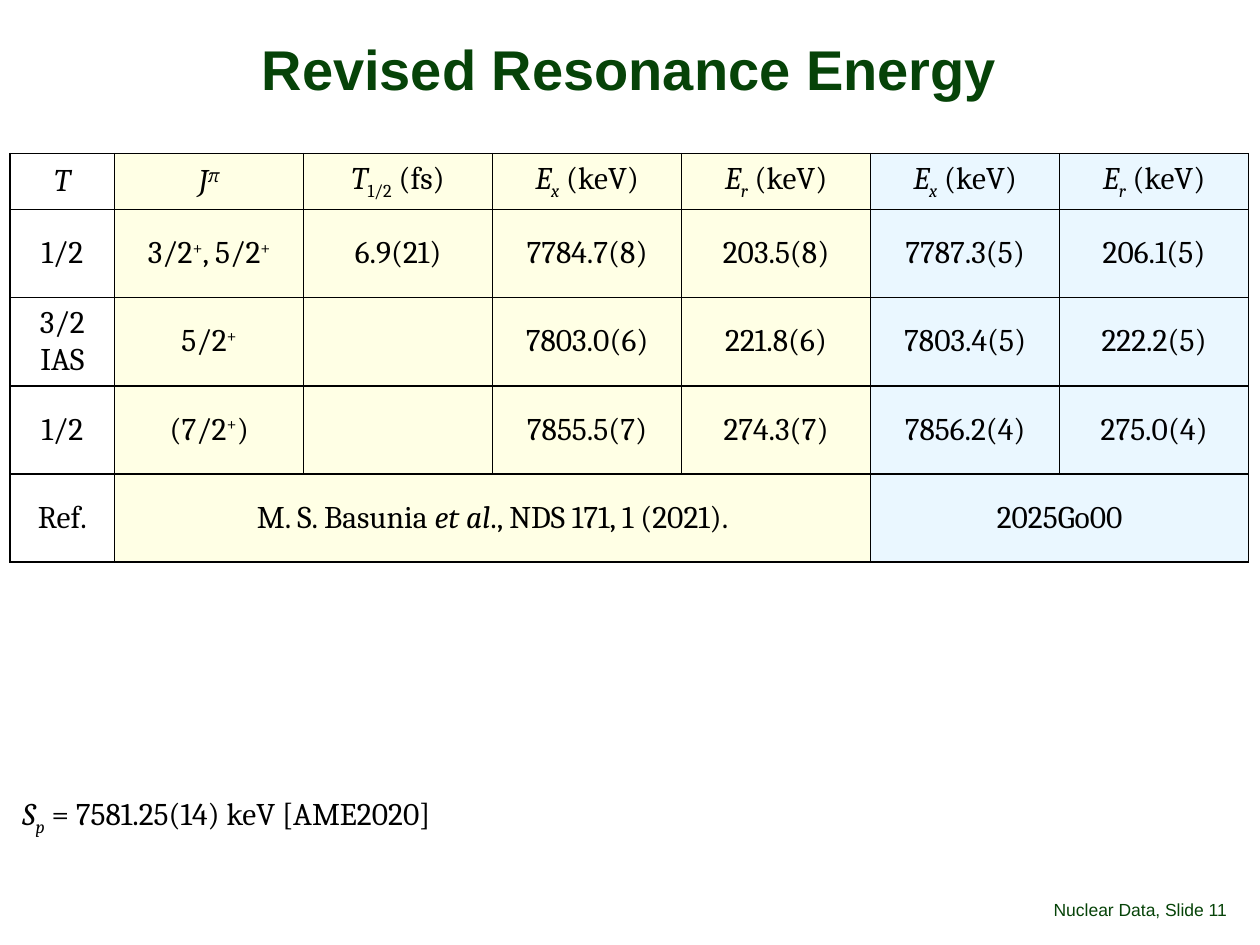
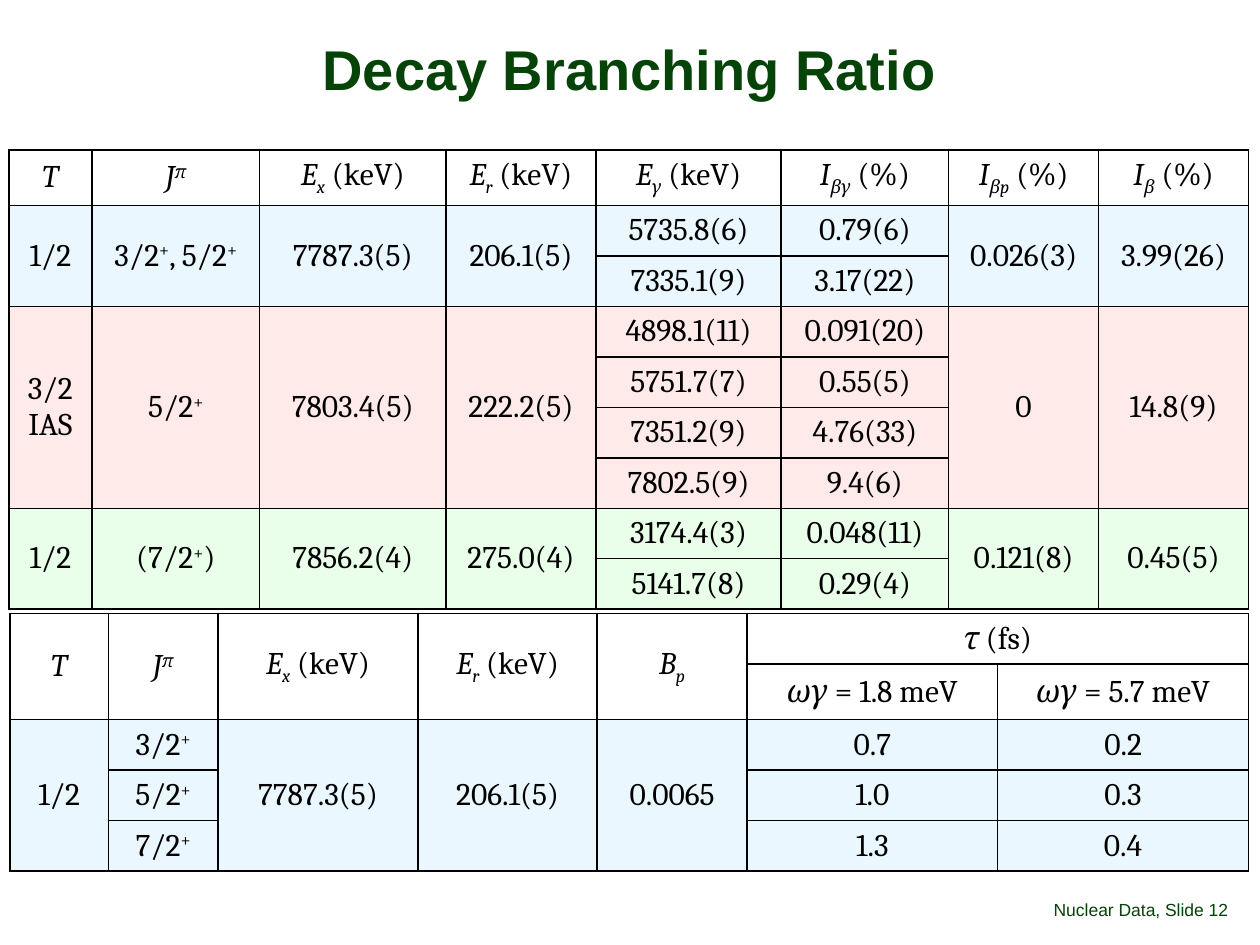
"""Build two slides of nuclear data tables: resonance energies and decay branching ratios."""

from dataclasses import dataclass
from itertools import groupby, takewhile

from lxml.etree import SubElement
from pptx import Presentation
from pptx.dml.color import RGBColor
from pptx.enum.text import MSO_ANCHOR, MSO_AUTO_SIZE, PP_ALIGN
from pptx.oxml.ns import qn
from pptx.util import Inches, Pt


@dataclass(frozen=True)
class Theme:
    """Colours, fonts and type sizes shared by the slides."""

    green: str = "064308"
    black: str = "000000"
    heading_font: str = "Arial"
    data_font: str = "Cambria"
    title_size: int = 32
    data_size: int = 18
    footer_size: int = 10
    border_width: int = 1


THEME = Theme()
YELLOW = ("FFFFCC", 50)
BLUE = ("CCECFF", 40)
PINK = ("FFCCCC", 40)
MINT = ("CCFFCC", 40)
LEFT, UP = "merge left", "merge up"

SPIN = "*J^π^*"
EXCITATION = "*E~x~* (keV)"
RESONANCE = "*E~r~* (keV)"
MIXED = "3/2^+^, 5/2^+^"
ISOBARIC = "3/2\nIAS"

RESONANCE_ROWS = [
    ["*T*", SPIN, "*T*~1/2~ (fs)", EXCITATION, RESONANCE, EXCITATION, RESONANCE],
    ["1/2", MIXED, "6.9(21)", "7784.7(8)", "203.5(8)", "7787.3(5)", "206.1(5)"],
    [ISOBARIC, "5/2^+^", "", "7803.0(6)", "221.8(6)", "7803.4(5)", "222.2(5)"],
    ["1/2", "(7/2^+^)", "", "7855.5(7)", "274.3(7)", "7856.2(4)", "275.0(4)"],
    ["Ref.", "M. S. Basunia *et al*., NDS 171, 1 (2021).", LEFT, LEFT, LEFT,
     "2025Go00", LEFT],
]

BRANCHING_HEADER = ["*T*", SPIN, EXCITATION, RESONANCE, "*E~γ~* (keV)",
                    "*I~βγ~* (%)", "*I~βp~* (%)", "*I~β~* (%)"]
BRANCHING_LEVELS = [
    (BLUE, ["1/2", MIXED, "7787.3(5)", "206.1(5)"],
     [("5735.8(6)", "0.79(6)"), ("7335.1(9)", "3.17(22)")],
     ["0.026(3)", "3.99(26)"]),
    (PINK, [ISOBARIC, "5/2^+^", "7803.4(5)", "222.2(5)"],
     [("4898.1(11)", "0.091(20)"), ("5751.7(7)", "0.55(5)"),
      ("7351.2(9)", "4.76(33)"), ("7802.5(9)", "9.4(6)")],
     ["0", "14.8(9)"]),
    (MINT, ["1/2", "(7/2^+^)", "7856.2(4)", "275.0(4)"],
     [("3174.4(3)", "0.048(11)"), ("5141.7(8)", "0.29(4)")],
     ["0.121(8)", "0.45(5)"]),
]

LIFETIME_ROWS = [
    ["*T*", SPIN, EXCITATION, RESONANCE, "*B~p~*", "*τ* (fs)", LEFT],
    [UP, UP, UP, UP, UP, "*ωγ* = 1.8 meV", "*ωγ* = 5.7 meV"],
    ["1/2", "3/2^+^", "7787.3(5)", "206.1(5)", "0.0065", "0.7", "0.2"],
    [UP, "5/2^+^", UP, UP, UP, "1.0", "0.3"],
    [UP, "7/2^+^", UP, UP, UP, "1.3", "0.4"],
]


def marked_characters(text):
    """Yield each character with its format: * is italic, ^ superscript, ~ subscript."""
    active = {"*": False, "^": False, "~": False}
    for character in text:
        if character in active:
            active[character] = not active[character]
        else:
            yield character, tuple(active.values())


def write(frame, text, size=THEME.data_size, font=THEME.data_font, color=THEME.black,
          bold=False, align=PP_ALIGN.LEFT, line_spacing=None):
    """Write marked text into a text frame, one paragraph per line."""
    for index, line in enumerate(text.split("\n")):
        paragraph = frame.add_paragraph() if index else frame.paragraphs[0]
        paragraph.alignment = align
        if line_spacing:
            paragraph.line_spacing = line_spacing
        for (italic, raised, lowered), group in groupby(marked_characters(line), lambda pair: pair[1]):
            run = paragraph.add_run()
            run.text = "".join(character for character, _ in group)
            run.font.size = Pt(size)
            run.font.name = font
            run.font.bold = bold
            run.font.italic = italic
            run.font.color.rgb = RGBColor.from_string(color)
            if raised or lowered:
                run.font._element.set("baseline", "30000" if raised else "-25000")


def set_margins(frame, horizontal, vertical):
    """Set equal side margins and equal top and bottom margins."""
    frame.margin_left = frame.margin_right = Inches(horizontal)
    frame.margin_top = frame.margin_bottom = Inches(vertical)


def style_cell(cell, fill):
    """Draw the four cell borders and a translucent fill."""
    properties = cell._tc.get_or_add_tcPr()
    for side in ("a:lnL", "a:lnR", "a:lnT", "a:lnB"):
        line = SubElement(properties, qn(side), w=str(Pt(THEME.border_width)))
        SubElement(SubElement(line, qn("a:solidFill")), qn("a:srgbClr"), val=THEME.black)
    if fill is None:
        cell.fill.background()
        return
    color, opacity = fill
    cell.fill.solid()
    cell.fill.fore_color.rgb = RGBColor.from_string(color)
    SubElement(properties.find(qn("a:solidFill"))[0], qn("a:alpha"), val=str(opacity * 1000))


def add_data_table(slide, left, top, widths, heights, rows, fills):
    """Add a bordered table, merging cells marked LEFT or UP."""
    shape = slide.shapes.add_table(len(rows), len(widths), Inches(left), Inches(top),
                                   Inches(sum(widths)), Inches(sum(heights)))
    table = shape.table
    table.first_row = table.horz_banding = False
    for column, width in zip(table.columns, widths):
        column.width = Inches(width)
    for row, height in zip(table.rows, heights):
        row.height = Inches(height)
    for r, values in enumerate(rows):
        for c, value in enumerate(values):
            cell = table.cell(r, c)
            style_cell(cell, fills[r][c])
            if value in (LEFT, UP):
                continue
            cell.vertical_anchor = MSO_ANCHOR.MIDDLE
            write(cell.text_frame, value, align=PP_ALIGN.CENTER)
            across = len(list(takewhile(lambda text: text == LEFT, values[c + 1:])))
            down = len(list(takewhile(lambda below: below[c] == UP, rows[r + 1:])))
            if across or down:
                cell.merge(table.cell(r + down, c + across))


def add_label(slide, text, left, top, width, height, **text_format):
    """Add a text box and return its text frame."""
    frame = slide.shapes.add_textbox(Inches(left), Inches(top), Inches(width),
                                     Inches(height)).text_frame
    write(frame, text, **text_format)
    return frame


def add_titled_slide(presentation, title, number):
    """Add a slide with its title and footer."""
    slide = presentation.slides.add_slide(presentation.slide_layouts[5])
    shape = slide.shapes.title
    shape.left, shape.top = Inches(0.08), Inches(0.31)
    shape.width, shape.height = Inches(9.83), Inches(0.53)
    frame = shape.text_frame
    frame.auto_size = MSO_AUTO_SIZE.NONE
    frame.vertical_anchor = MSO_ANCHOR.MIDDLE
    set_margins(frame, 0.06, 0.02)
    write(frame, title, size=THEME.title_size, font=THEME.heading_font, color=THEME.green,
          bold=True, align=PP_ALIGN.CENTER, line_spacing=0.88)
    footers = [("Nuclear Data", 4.53, 4.64, PP_ALIGN.RIGHT),
               (f", Slide {number}", 9.17, 0.83, PP_ALIGN.LEFT)]
    for text, left, width, align in footers:
        footer = add_label(slide, text, left, 6.95, width, 0.4, size=THEME.footer_size,
                           font=THEME.heading_font, color=THEME.green, align=align,
                           line_spacing=0.9)
        footer.word_wrap = True
        footer.vertical_anchor = MSO_ANCHOR.BOTTOM
        set_margins(footer, 0, 0.05)
    return slide


def add_resonance_slide(presentation):
    """Compare evaluated and revised resonance energies."""
    slide = add_titled_slide(presentation, "Revised Resonance Energy", 11)
    column_fills = [None] + [YELLOW] * 4 + [BLUE] * 2
    add_data_table(slide, 0.08, 1.22, [0.83] + [1.5] * 6, [0.43] + [0.7] * 4,
                   RESONANCE_ROWS, [column_fills] * len(RESONANCE_ROWS))
    add_label(slide, "*S~p~* = 7581.25(14) keV [AME2020]", 0.08, 6.25, 3.79, 0.4).word_wrap = False


def add_branching_slide(presentation):
    """Show decay branches by level and the lifetimes derived from them."""
    slide = add_titled_slide(presentation, "Decay Branching Ratio", 12)
    rows, fills = [BRANCHING_HEADER], [[None] * 8]
    for fill, level, gammas, totals in BRANCHING_LEVELS:
        for index, gamma in enumerate(gammas):
            rows.append([UP] * 4 + [*gamma] + [UP] * 2 if index else level + [*gamma] + totals)
            fills.append([fill] * 8)
    add_data_table(slide, 0.07, 1.19, [0.66, 1.33, 1.48, 1.19, 1.47, 1.33, 1.19, 1.19],
                   [0.43] + [0.39] * 8, rows, fills)
    add_data_table(slide, 0.08, 4.87, [0.78, 0.87, 1.59, 1.42, 1.19, 1.99, 1.99],
                   [0.39, 0.42] + [0.39] * 3, LIFETIME_ROWS,
                   [[None] * 7] * 2 + [[BLUE] * 7] * 3)


def main():
    """Build and save the presentation."""
    presentation = Presentation()
    presentation.slide_width, presentation.slide_height = Inches(10), Inches(7.5)
    add_resonance_slide(presentation)
    add_branching_slide(presentation)
    presentation.save("out.pptx")


if __name__ == "__main__":
    main()
